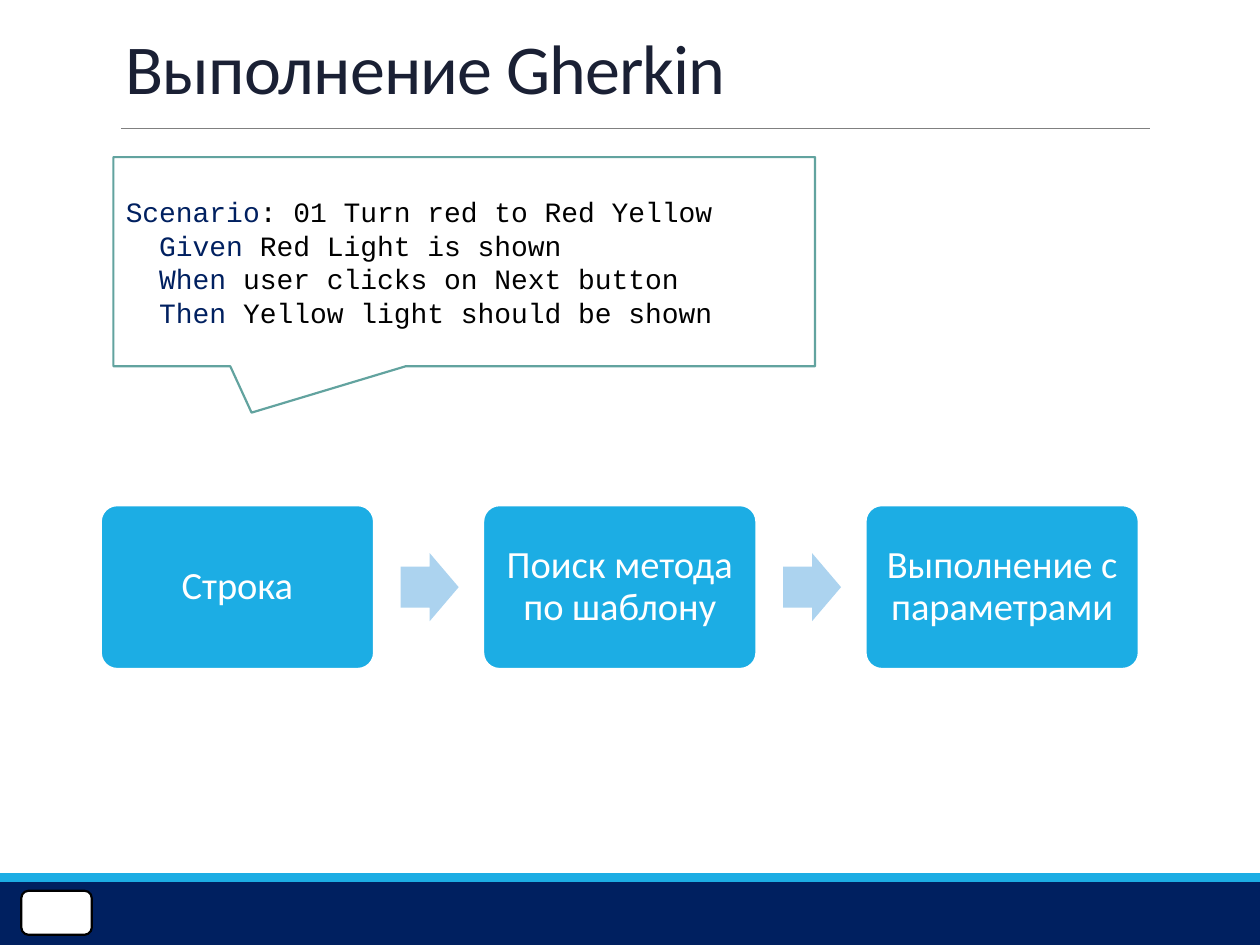
from dataclasses import dataclass

import pptx
import pptx.dml.color
import pptx.enum.shapes
import pptx.enum.text
import pptx.oxml.ns
import pptx.util
from lxml import etree

Pt = pptx.util.Pt
SHAPE = pptx.enum.shapes.MSO_SHAPE
ALIGN = pptx.enum.text.PP_ALIGN
ANCHOR = pptx.enum.text.MSO_ANCHOR

NAVY, BLUE, PALE, WHITE, BLACK = "002060", "1CADE4", "ACD3EF", "FFFFFF", "000000"


@dataclass(frozen=True)
class Box:
    left: float
    top: float
    width: float
    height: float

    def emu(self) -> tuple:
        return Pt(self.left), Pt(self.top), Pt(self.width), Pt(self.height)


@dataclass(frozen=True)
class CodeLine:
    indent: str
    keyword: str
    rest: str


STEPS = ["Строка", "Поиск метода по шаблону", "Выполнение с параметрами"]
STEP = Box(57.6, 288.7, 156.2, 93.6)
STEP_PITCH = 218.5
ARROW = Box(229, 316.1, 33.1, 38.9)

SCENARIO = [
    CodeLine("", "Scenario", ": 01 Turn red to Red Yellow"),
    CodeLine("  ", "Given", " Red Light is shown"),
    CodeLine("  ", "When", " user clicks on Next button"),
    CodeLine("  ", "Then", " Yellow light should be shown"),
]


def rgb(value: str) -> pptx.dml.color.RGBColor:
    return pptx.dml.color.RGBColor.from_string(value)


def set_font(font, name: str, size: float, color: str) -> None:
    font.name, font.size = name, Pt(size)
    font.color.rgb = rgb(color)


def add_shape(s, kind, box: Box, fill: str, line: str = "", adj: tuple = ()):
    """Add a flat preset shape, outlined only if a line colour is given."""
    sp = s.shapes.add_shape(kind, *box.emu())
    sp.shadow.inherit = False
    sp.fill.solid()
    sp.fill.fore_color.rgb = rgb(fill)
    if line:
        sp.line.color.rgb = rgb(line)
        sp.line.width = Pt(1.25)
    else:
        sp.line.fill.background()
    for i, value in enumerate(adj):
        sp.adjustments[i] = value
    return sp


def add_footer(s) -> None:
    add_shape(s, SHAPE.RECTANGLE, Box(0, 504, 720, 36), NAVY)
    add_shape(s, SHAPE.RECTANGLE, Box(0, 499, 720, 5), BLUE)
    add_shape(s, SHAPE.ROUNDED_RECTANGLE, Box(12.2, 509, 40.3, 25.2), WHITE, BLACK)


def add_title(s, text: str) -> None:
    rule = s.shapes.add_connector(
        pptx.enum.shapes.MSO_CONNECTOR.STRAIGHT, Pt(69.1), Pt(73.4), Pt(657.4), Pt(73.4))
    rule.line.color.rgb = rgb("808080")
    rule.line.width = Pt(0.5)
    etree.SubElement(rule._element.spPr, pptx.oxml.ns.qn("a:effectLst"))

    tf = s.shapes.add_textbox(*Box(64.8, 22.3, 594, 43.2).emu()).text_frame
    tf.word_wrap = True
    tf.vertical_anchor = ANCHOR.BOTTOM
    p = tf.paragraphs[0]
    p.line_spacing = 0.85
    r = p.add_run()
    r.text = text
    set_font(p.font, "Calibri", 40, "1A2034")
    r._r.get_or_add_rPr().set("spc", "-50")


def add_step(s, index: int, text: str) -> None:
    box = Box(STEP.left + index * STEP_PITCH, STEP.top, STEP.width, STEP.height)
    sp = add_shape(s, SHAPE.ROUNDED_RECTANGLE, box, BLUE, WHITE, (0.1,))
    tf = sp.text_frame
    tf.word_wrap = True
    tf.vertical_anchor = ANCHOR.MIDDLE
    tf.margin_left = tf.margin_right = tf.margin_top = tf.margin_bottom = Pt(6.5)
    p = tf.paragraphs[0]
    p.text = text
    p.alignment = ALIGN.CENTER
    p.line_spacing = 0.9
    set_font(p.font, "Calibri", 22, WHITE)


def add_step_arrow(s, index: int) -> None:
    box = Box(ARROW.left + index * STEP_PITCH, ARROW.top, ARROW.width, ARROW.height)
    add_shape(s, SHAPE.RIGHT_ARROW, box, PALE, adj=(0.6, 0.5))


def add_scenario(s, lines: list[CodeLine]) -> None:
    sp = add_shape(s, SHAPE.RECTANGULAR_CALLOUT, Box(64.8, 89.8, 401, 119.5),
                   WHITE, "62A39F", (-0.303, 0.722))
    tf = sp.text_frame
    tf.word_wrap = True
    tf.vertical_anchor = ANCHOR.MIDDLE
    for i, line in enumerate(lines):
        p = tf.add_paragraph() if i else tf.paragraphs[0]
        p.alignment = ALIGN.LEFT
        for text, color in ((line.indent + line.keyword, NAVY), (line.rest, BLACK)):
            r = p.add_run()
            r.text = text
            set_font(r.font, "Courier New", 16, color)


def main() -> None:
    prs = pptx.Presentation()
    prs.slide_width, prs.slide_height = Pt(720), Pt(540)
    s = prs.slides.add_slide(prs.slide_layouts[6])
    add_footer(s)
    add_title(s, "Выполнение Gherkin")
    for i, text in enumerate(STEPS):
        if i:
            add_step_arrow(s, i - 1)
        add_step(s, i, text)
    add_scenario(s, SCENARIO)
    prs.save("out.pptx")


if __name__ == "__main__":
    main()
